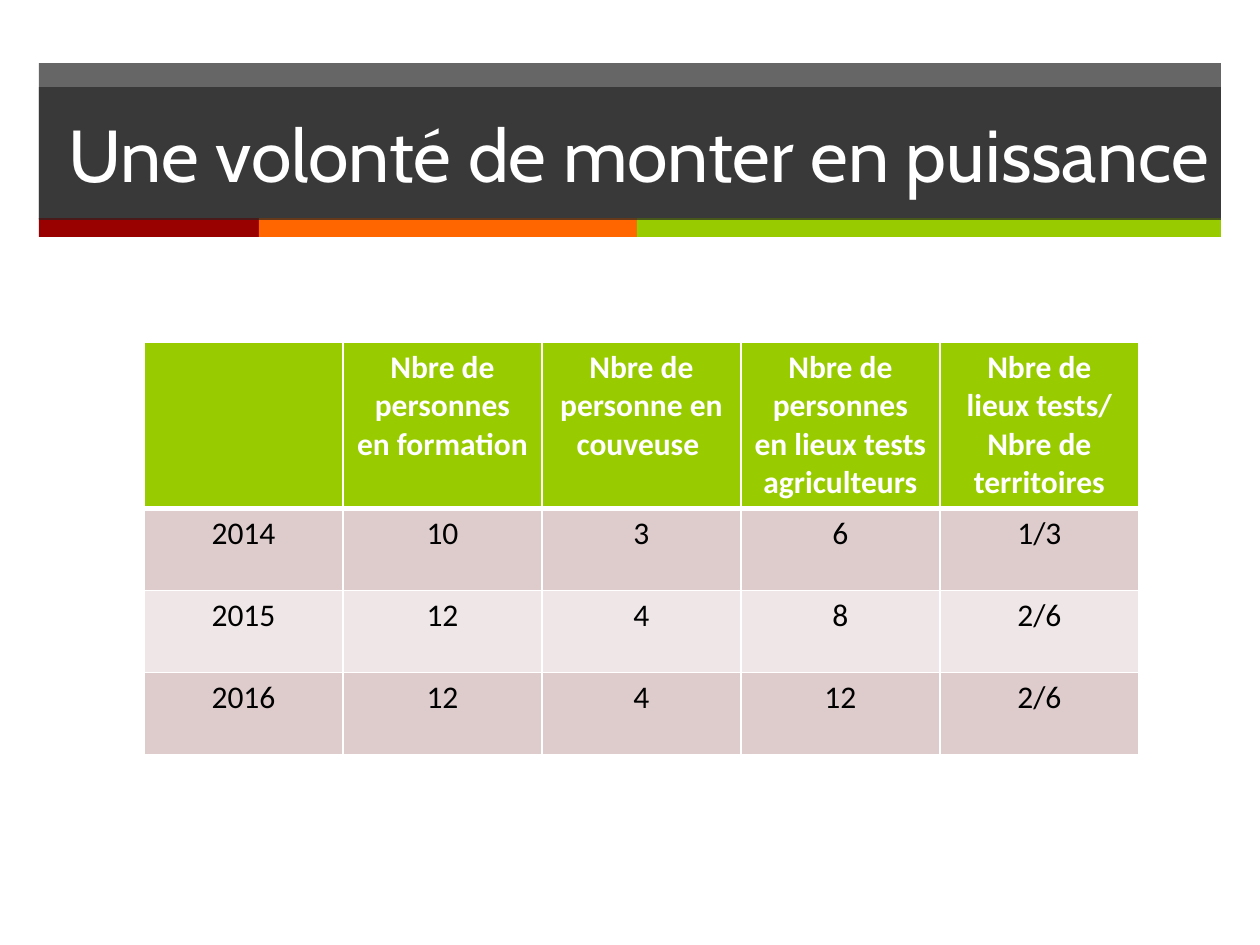
from lxml import etree
from pptx import Presentation
from pptx import util as u
from pptx.dml.color import RGBColor
from pptx.enum import shapes, text
from pptx.oxml.ns import qn

PX_PER_INCH = 126
WHITE = RGBColor(0xFF, 0xFF, 0xFF)
BLACK = RGBColor(0x00, 0x00, 0x00)
CHARCOAL = RGBColor(0x26, 0x26, 0x26)
RED = RGBColor(0x99, 0x00, 0x00)
ORANGE = RGBColor(0xFF, 0x66, 0x00)
GREEN = RGBColor(0x99, 0xCC, 0x00)
ROSE = RGBColor(0xDE, 0xCC, 0xCC)
PALE_ROSE = RGBColor(0xEF, 0xE7, 0xE7)

BANNER_LEFT, BANNER_WIDTH = 39, 1182
STRIPES = [(RED, 220), (ORANGE, 378), (GREEN, 584)]
TABLE_LEFT, TABLE_TOP = 144, 342
COLUMN_WIDTH, HEADER_HEIGHT, ROW_HEIGHT = 199, 164, 82
ROWS = [
    ["", "Nbre de personnes en formation", "Nbre de personne en couveuse ",
     "Nbre de personnes en lieux tests agriculteurs",
     "Nbre de lieux tests/ Nbre de territoires"],
    ["2014", "10", "3", "6", "1/3"],
    ["2015", "12", "4", "8", "2/6"],
    ["2016", "12", "4", "12", "2/6"],
]


def px(length):
    return u.Emu(round(length * 914400 / PX_PER_INCH))


def write_text(frame, content, font="Calibri", size=18, color=BLACK,
               bold=False, align=text.PP_ALIGN.CENTER):
    frame.word_wrap = True
    paragraph = frame.paragraphs[0]
    paragraph.alignment = align
    run = paragraph.add_run()
    run.text = content
    run.font.name = font
    run.font.size = u.Pt(size)
    run.font.bold = bold
    run.font.color.rgb = color


def add_bar(slide, left, top, width, height, color, opacity=100):
    shape = slide.shapes.add_shape(shapes.MSO_SHAPE.RECTANGLE,
                                   px(left), px(top), px(width), px(height))
    shape.shadow.inherit = False
    shape.line.fill.background()
    shape.fill.solid()
    shape.fill.fore_color.rgb = color
    if opacity < 100:
        color_element = shape.fill._xPr.find(".//" + qn("a:srgbClr"))
        etree.SubElement(color_element, qn("a:alpha"), val=str(opacity * 1000))
    return shape


def set_borders(cell, color, **widths):
    """Widths in points by side; borders must come before the fill."""
    properties = cell._tc.get_or_add_tcPr()
    for index, side in enumerate("LRTB"):
        line = etree.Element(qn("a:ln" + side), w=str(u.Pt(widths.get(side, 1))))
        fill = etree.SubElement(line, qn("a:solidFill"))
        etree.SubElement(fill, qn("a:srgbClr"), val=str(color))
        properties.insert(index, line)


def add_banner(slide):
    # Two overlapping translucent bands, the front one holding the title
    add_bar(slide, BANNER_LEFT, 63, BANNER_WIDTH, 156, CHARCOAL, opacity=70)
    left = BANNER_LEFT
    for color, width in STRIPES:
        add_bar(slide, left, 218, width, 19, color)
        left += width
    title = add_bar(slide, BANNER_LEFT, 87, BANNER_WIDTH, 133, CHARCOAL, opacity=70)
    title.text_frame.vertical_anchor = text.MSO_ANCHOR.MIDDLE
    write_text(title.text_frame, "Une volonté de monter en puissance",
               font="Cabin", size=42, color=WHITE, align=text.PP_ALIGN.RIGHT)


def add_figures_table(slide):
    column_count, body_count = len(ROWS[0]), len(ROWS) - 1
    table = slide.shapes.add_table(
        len(ROWS), column_count, px(TABLE_LEFT), px(TABLE_TOP),
        px(column_count * COLUMN_WIDTH),
        px(HEADER_HEIGHT + body_count * ROW_HEIGHT)).table
    for column in table.columns:
        column.width = px(COLUMN_WIDTH)
    for row_index, values in enumerate(ROWS):
        header = row_index == 0
        table.rows[row_index].height = px(HEADER_HEIGHT if header else ROW_HEIGHT)
        band = GREEN if header else (ROSE if row_index % 2 else PALE_ROSE)
        for column_index, value in enumerate(values):
            cell = table.cell(row_index, column_index)
            cell.fill.solid()
            cell.fill.fore_color.rgb = band
            set_borders(cell, WHITE, B=3 if header else 1,
                        T=3 if row_index == 1 else 1)
            if value:
                write_text(cell.text_frame, value, bold=header,
                           color=WHITE if header else BLACK)


def main():
    presentation = Presentation()
    presentation.slide_width, presentation.slide_height = u.Inches(10), u.Inches(7.5)
    slide = presentation.slides.add_slide(presentation.slide_layouts[6])
    add_banner(slide)
    add_figures_table(slide)
    presentation.save("out.pptx")


if __name__ == "__main__":
    main()
